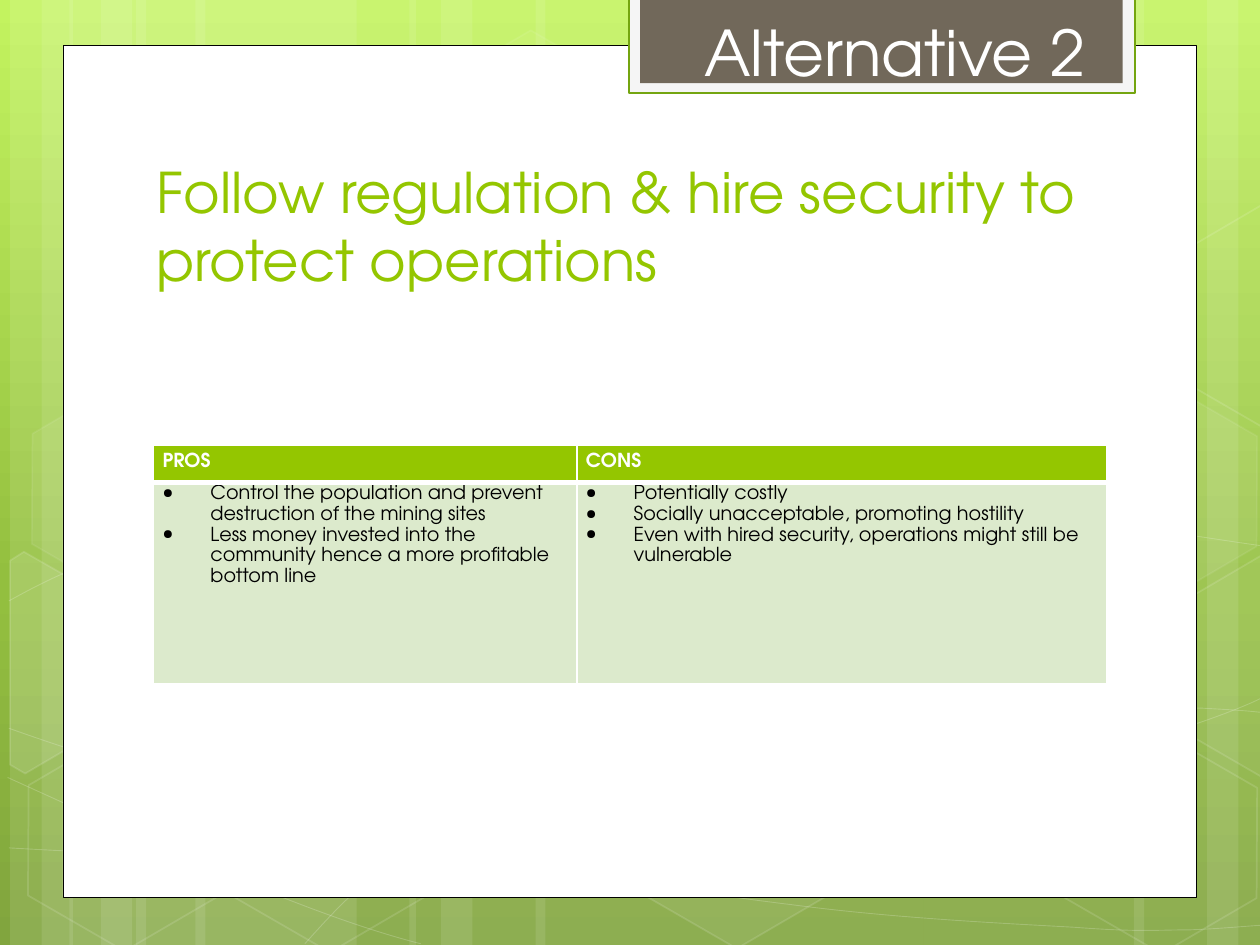
from dataclasses import dataclass
from typing import Optional

import lxml.etree
import pptx
import pptx.dml.color
import pptx.enum.shapes
import pptx.enum.text
import pptx.oxml.ns
import pptx.util

Inches = pptx.util.Inches
Pt = pptx.util.Pt
qn = pptx.oxml.ns.qn
Point = tuple[float, float]

FONT = "TeX Gyre Adventor"
COLORS = {
    "white": "FFFFFF", "black": "000000", "green": "94C600", "dark green": "74A510",
    "pale green": "DCEACC", "off white": "F5F5F5", "brown": "71685A",
}
BACKGROUND_STOPS = [(0, "C3F35F"), (62, "93BF3F"), (100, "81A53E")]


@dataclass
class Style:
    fill: Optional[str] = None
    fill_alpha: int = 100
    line: Optional[str] = None
    line_width: float = 1
    line_alpha: int = 100


@dataclass
class Hexagon:
    left: float
    top: float
    fill_alpha: int
    line_alpha: int


@dataclass
class Curve:
    start: Point
    segments: list[tuple[Point, ...]]


STRIPES = [(1.08, 1.75), (0.08, 0.5), (0.33, 0.83), (1.55, 1.75), (0.55, 0.5), (0.8, 0.83),
           (7.33, 1.75), (9.58, 0.5), (9, 0.83), (4.25, 3.08), (3.25, 0.5), (3.5, 0.83)]

CURVES = [
    Curve((0.07, 6.73), [
        ((0.61, 6.76), (1.15, 6.79), (1.9, 6.78)), ((2.65, 6.77), (3.58, 6.75), (4.58, 6.65)),
        ((5.58, 6.55), (7, 6.36), (7.92, 6.17)), ((8.83, 5.98), (9.77, 5.68), (10.07, 5.51))]),
    Curve((0.07, 4.77), [
        ((0.36, 4.61), (0.65, 4.46), (1.21, 4.31)), ((1.78, 4.16), (2.59, 3.94), (3.47, 3.87)),
        ((4.36, 3.8), (5.44, 3.79), (6.54, 3.87)), ((7.64, 3.95), (9.47, 4.26), (10.07, 4.34))]),
    Curve((0.06, 6.17), [((1.27, 6.72), (2.47, 7.27), (3.34, 7.49))]),
    Curve((0.07, 5.78), [
        ((0.38, 5.89), (0.7, 6), (1.28, 6.16)), ((1.86, 6.31), (2.73, 6.56), (3.57, 6.73)),
        ((4.4, 6.9), (5.45, 7.08), (6.28, 7.18)), ((7.11, 7.29), (8, 7.33), (8.53, 7.36)),
        ((9.05, 7.4), (9.19, 7.38), (9.45, 7.38)), ((9.71, 7.37), (9.89, 7.35), (10.07, 7.34))]),
    Curve((2.42, 7.49), [
        ((2.6, 7.29), (2.78, 7.09), (3.02, 6.91)), ((3.26, 6.73), (3.6, 6.53), (3.88, 6.39)),
        ((4.16, 6.25), (4.33, 6.19), (4.7, 6.09)), ((5.06, 5.99), (5.73, 5.85), (6.08, 5.78)),
        ((6.44, 5.71), (6.49, 5.71), (6.8, 5.69)), ((7.11, 5.66), (7.6, 5.63), (7.94, 5.62)),
        ((8.29, 5.61), (8.86, 5.62), (8.86, 5.62)), ((9.53, 5.62),),
        ((9.71, 5.63), (9.88, 5.64), (9.97, 5.65)), ((10.06, 5.66), (10.03, 5.65), (10.06, 5.66))]),
]

HEXAGONS = [
    Hexagon(3.34, 0.36, 4, 8), Hexagon(4.97, 5.89, 6, 12), Hexagon(0.11, 5.91, 0, 12),
    Hexagon(0.14, 3.12, 7, 8), Hexagon(1.74, 5.92, 0, 12), Hexagon(7.53, 4.53, 10, 12),
    Hexagon(8.34, 5.93, 0, 12), Hexagon(8.34, 3.14, 7, 8),
]

CUT_HEXAGONS = [
    (10, [(0.08, 4.45), (0.19, 4.38), (0.96, 4.82), (0.95, 5.7), (0.2, 6.14), (0.08, 6.07)]),
    (4, [(9.26, 4.85), (10.01, 4.41), (10.09, 4.46), (10.09, 6.13), (10.02, 6.17), (9.26, 5.73)]),
    (0, [(9.26, 2.07), (10.01, 1.63), (10.1, 1.68), (10.09, 3.35), (10.02, 3.39), (9.26, 2.95)]),
]

ARGUMENTS = {
    "PROS": ["Control the population and prevent destruction of the mining sites",
             "Less money invested into the community hence a more profitable bottom line"],
    "CONS": ["Potentially costly",
             "Socially unacceptable, promoting hostility",
             "Even with hired security, operations might still be vulnerable"],
}


def rgb(name: str) -> pptx.dml.color.RGBColor:
    return pptx.dml.color.RGBColor.from_string(COLORS[name])


def paint(fill, color: str, alpha: int, parent) -> None:
    fill.solid()
    fill.fore_color.rgb = rgb(color)
    if alpha < 100:
        color_element = parent.find(qn("a:solidFill")).find(qn("a:srgbClr"))
        lxml.etree.SubElement(color_element, qn("a:alpha"), val=str(alpha * 1000))


def apply_style(shape, style: Style) -> None:
    shape.shadow.inherit = False
    properties = shape.element.spPr
    if style.fill and style.fill_alpha:
        paint(shape.fill, style.fill, style.fill_alpha, properties)
    else:
        shape.fill.background()
    if style.line:
        shape.line.width = Pt(style.line_width)
        paint(shape.line.fill, style.line, style.line_alpha, properties.find(qn("a:ln")))
    else:
        shape.line.fill.background()


def add_preset(page, kind, left: float, top: float, width: float, height: float, style: Style):
    shape = page.shapes.add_shape(kind, Inches(left), Inches(top), Inches(width), Inches(height))
    apply_style(shape, style)
    return shape


def add_outline(page, points: list[Point], close: bool, style: Style):
    start, *rest = [(Inches(x), Inches(y)) for x, y in points]
    builder = page.shapes.build_freeform(*start)
    builder.add_line_segments(rest, close=close)
    shape = builder.convert_to_shape()
    apply_style(shape, style)
    return shape


def add_curve(page, curve: Curve, style: Style) -> None:
    shape = add_outline(page, [curve.start] + [part[-1] for part in curve.segments], False, style)
    lines = list(shape.element.iter(qn("a:lnTo")))
    for line, points in zip(lines, curve.segments):
        if len(points) == 3:
            line.tag = qn("a:cubicBezTo")
            for index, (x, y) in enumerate(points[:2]):
                handle = lxml.etree.Element(qn("a:pt"), x=str(Inches(x) - shape.left),
                                            y=str(Inches(y) - shape.top))
                line.insert(index, handle)


def write_text(para, text: str, *, size: float, color: str, bold: bool = False,
               spacing: Optional[float] = None, bullet: bool = False) -> None:
    span = para.add_run()
    span.text = text
    span.font.name, span.font.size, span.font.bold = FONT, Pt(size), bold
    span.font.color.rgb = rgb(color)
    para.alignment = pptx.enum.text.PP_ALIGN.LEFT
    if spacing:
        para.line_spacing = spacing
    if bullet:
        properties = para._p.get_or_add_pPr()
        properties.set("marL", str(Inches(0.38)))
        properties.set("indent", str(-Inches(0.38)))
        lxml.etree.SubElement(properties, qn("a:buSzPct"), val="70000")
        lxml.etree.SubElement(properties, qn("a:buChar"), char="●")


def format_cell(cell, fill: str, borders: dict[str, float]) -> None:
    cell.margin_left = cell.margin_right = Inches(0.07)
    cell.margin_top = cell.margin_bottom = 0
    properties = cell._tc.get_or_add_tcPr()
    for side, width in borders.items():
        line = lxml.etree.SubElement(properties, qn(f"a:ln{side}"), w=str(Pt(width)))
        solid = lxml.etree.SubElement(line, qn("a:solidFill"))
        lxml.etree.SubElement(solid, qn("a:srgbClr"), val=COLORS["white"])
    cell.fill.solid()
    cell.fill.fore_color.rgb = rgb(fill)


def add_arguments_table(page) -> None:
    table = page.shapes.add_table(2, 2, Inches(1.22), Inches(3.53), Inches(7.56), Inches(1.9)).table
    table.horz_banding = False
    for column, width in zip(table.columns, (3.36, 4.2)):
        column.width = Inches(width)
    for row, height in zip(table.rows, (0.3, 1.6)):
        row.height = Inches(height)
    for index, (heading, points) in enumerate(ARGUMENTS.items()):
        header, body = table.cell(0, index), table.cell(1, index)
        format_cell(header, "green", {"L": 1, "R": 1, "T": 1, "B": 3})
        format_cell(body, "pale green", {"L": 1, "R": 1, "T": 3, "B": 1})
        write_text(header.text_frame.paragraphs[0], heading,
                   size=11, color="white", bold=True, spacing=1.5)
        for number, point in enumerate(points):
            frame = body.text_frame
            para = frame.add_paragraph() if number else frame.paragraphs[0]
            write_text(para, point, size=11, color="black", spacing=1.15, bullet=True)


def add_background(page) -> None:
    fill = page.background.fill
    fill.gradient()
    fill.gradient_angle = 270
    stops = next(page.element.iter(qn("a:gsLst")))
    for stop in list(stops):
        stops.remove(stop)
    for position, color in BACKGROUND_STOPS:
        stop = lxml.etree.SubElement(stops, qn("a:gs"), pos=str(position * 1000))
        lxml.etree.SubElement(stop, qn("a:srgbClr"), val=color)


def add_decoration(page) -> None:
    kinds = pptx.enum.shapes.MSO_SHAPE
    for left, width in STRIPES:
        add_preset(page, kinds.RECTANGLE, left, 0, width, 7.5, Style("white", 10))
    for curve in CURVES:
        add_curve(page, curve, Style(line="white", line_width=0.5, line_alpha=20))
    for item in HEXAGONS:
        hexagon = add_preset(page, kinds.HEXAGON, item.left, item.top, 1.75, 1.52,
                             Style("white", item.fill_alpha, "white", 1, item.line_alpha))
        hexagon.adjustments[0] = 0.285
        hexagon.rotation = 30
    for alpha, points in CUT_HEXAGONS:
        add_outline(page, points, True, Style("white", alpha, "white", 1, 12))
    add_preset(page, kinds.RECTANGLE, 0.5, 0.36, 9, 6.76,
               Style("white", line="black", line_width=0.5))
    add_preset(page, kinds.RECTANGLE, 4.99, -0.02, 4.02, 0.76,
               Style("off white", line="dark green", line_width=1.25))
    add_preset(page, kinds.RECTANGLE, 5.08, -0.02, 3.83, 0.68, Style("brown"))


def add_title(page) -> None:
    title = page.shapes.title
    title.left, title.top, title.width, title.height = map(Inches, (1.14, 1.12, 7.68, 1.25))
    title.text_frame.vertical_anchor = pptx.enum.text.MSO_ANCHOR.BOTTOM
    title.text_frame.auto_size = pptx.enum.text.MSO_AUTO_SIZE.NONE
    write_text(title.text_frame.paragraphs[0],
               "Follow regulation & hire security to protect operations", size=32, color="green")
    page.shapes._spTree.append(title.element)


def add_tab_label(page) -> None:
    box = page.shapes.add_textbox(Inches(5.49), Inches(0.06), Inches(3.29), Inches(0.71))
    box.text_frame.word_wrap = False
    box.text_frame.auto_size = pptx.enum.text.MSO_AUTO_SIZE.SHAPE_TO_FIT_TEXT
    write_text(box.text_frame.paragraphs[0], "Alternative 2", size=36, color="white")


def main() -> None:
    deck = pptx.Presentation()
    deck.slide_width, deck.slide_height = Inches(10), Inches(7.5)
    page = deck.slides.add_slide(deck.slide_layouts[5])
    add_background(page)
    add_decoration(page)
    add_title(page)
    add_arguments_table(page)
    add_tab_label(page)
    deck.save("out.pptx")


if __name__ == "__main__":
    main()
